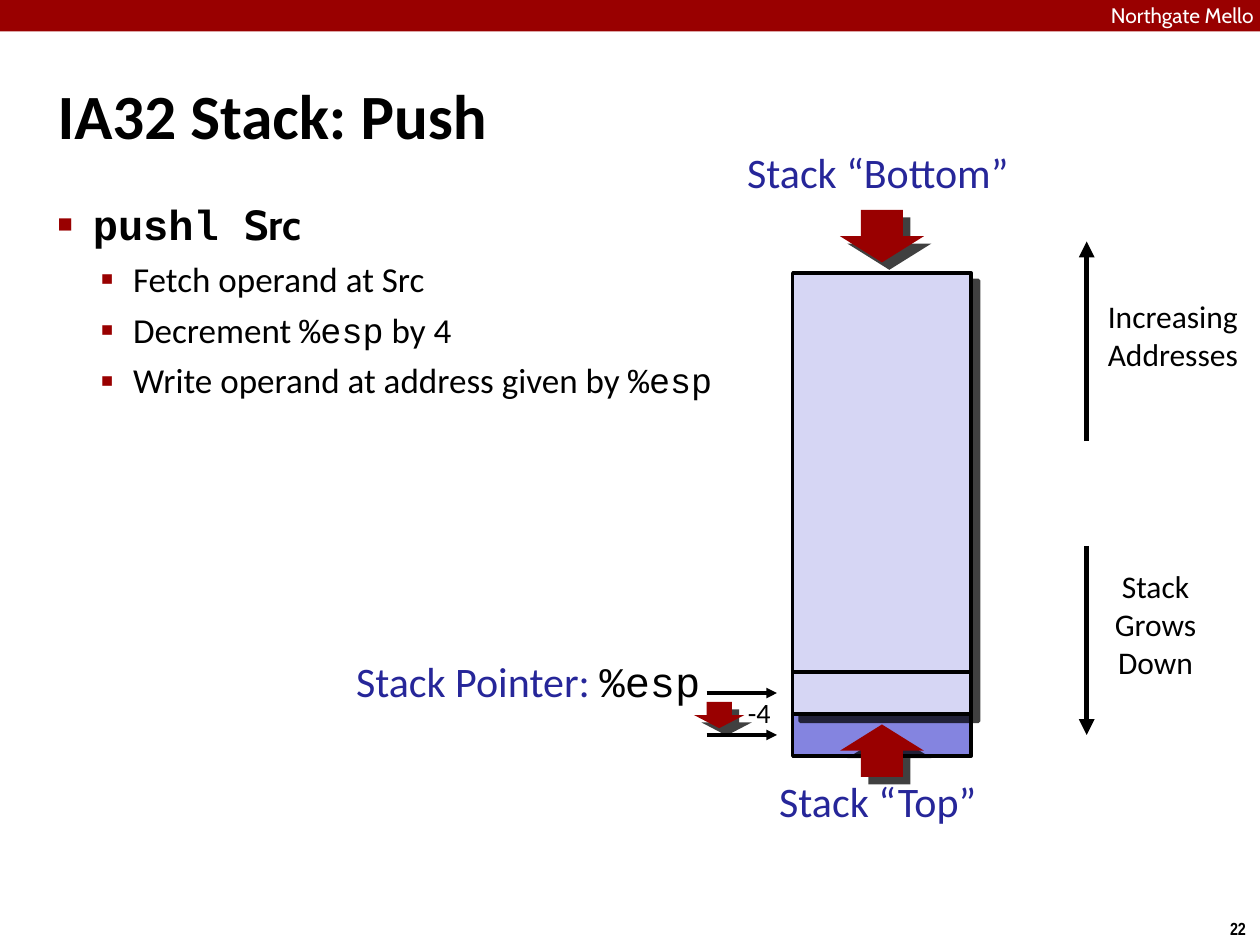
import pptx
import pptx.dml.color
import pptx.enum.shapes
import pptx.enum.text
import pptx.oxml
import pptx.oxml.ns
import pptx.util

SHAPE = pptx.enum.shapes.MSO_SHAPE
ALIGN = pptx.enum.text.PP_ALIGN
ANCHOR = pptx.enum.text.MSO_ANCHOR
COLORS = {
    "black": "000000", "white": "FFFFFF", "red": "990000", "blue": "262699",
    "stack": "D6D6F4", "top": "8484E0",
}
CELL = pptx.util.Inches(1 / 12)  # the slide is 120 columns by 90 rows
COLS, ROWS = 120, 90
NS = pptx.oxml.ns.nsdecls("a")


def cells(*values):
    return [round(v * CELL) for v in values]


def rgb(name):
    return pptx.dml.color.RGBColor.from_string(COLORS[name])


def inside(box, x, y, w, h):
    """Box in grid cells, offset from the corner of its region."""
    return box[0] + x, box[1] + y, w, h


def add_run(p, text, size=18, font="Calibri", color="black", bold=False):
    r = p.add_run()
    r.text = text
    r.font.size = pptx.util.Pt(size)
    r.font.name = font
    r.font.bold = bold
    r.font.color.rgb = rgb(color)


def set_frame(tf, inset=0, wrap=False, anchor=ANCHOR.TOP):
    tf.margin_left = tf.margin_right = pptx.util.Inches(inset)
    tf.margin_top = tf.margin_bottom = pptx.util.Inches(inset)
    tf.auto_size = pptx.enum.text.MSO_AUTO_SIZE.NONE
    tf.word_wrap = wrap
    tf.vertical_anchor = anchor


def add_label(s, box, lines, align=ALIGN.CENTER, wrap=False, inset=0, **fmt):
    """Text box; a line is a string or a list of (text, format) runs."""
    tf = s.shapes.add_textbox(*cells(*box)).text_frame
    set_frame(tf, inset, wrap)
    for i, line in enumerate(lines):
        p = tf.paragraphs[0] if i == 0 else tf.add_paragraph()
        p.alignment = align
        for text, extra in [(line, {})] if isinstance(line, str) else line:
            add_run(p, text, **{**fmt, **extra})


def add_block(s, kind, box, fill, line=None, shadow=False):
    sp = s.shapes.add_shape(kind, *cells(*box))
    sp.shadow.inherit = False
    sp.fill.solid()
    sp.fill.fore_color.rgb = rgb(fill)
    if line:
        sp.line.color.rgb = rgb(line)
        sp.line.width = pptx.util.Pt(2)
    else:
        sp.line.fill.background()
    if shadow:
        effects = sp._element.spPr.find(pptx.oxml.ns.qn("a:effectLst"))
        effects.append(pptx.oxml.parse_xml(
            f'<a:outerShdw {NS} dist="{pptx.util.Pt(6)}" dir="2700000" algn="ctr" rotWithShape="0">'
            f'<a:srgbClr val="{COLORS["black"]}"><a:alpha val="75000"/></a:srgbClr></a:outerShdw>'))


def add_line(s, x1, y1, x2, y2, width=2, arrow=True):
    line = s.shapes.add_connector(
        pptx.enum.shapes.MSO_CONNECTOR.STRAIGHT, *cells(x1, y1, x2, y2))
    line.line.color.rgb = rgb("black")
    line.line.width = pptx.util.Pt(width)
    if arrow:
        line.line._get_or_add_ln().append(
            pptx.oxml.parse_xml(f'<a:tailEnd {NS} type="triangle"/>'))
    line._element.spPr.append(pptx.oxml.parse_xml(f"<a:effectLst {NS}/>"))


def set_indent(p, left, hanging, bullet=None, percent=100):
    pPr = p._p.get_or_add_pPr()
    pPr.set("marL", str(pptx.util.Inches(left)))
    pPr.set("indent", str(-pptx.util.Inches(hanging)))
    if bullet:
        for xml in (f'<a:buClr {NS}><a:srgbClr val="{COLORS["red"]}"/></a:buClr>',
                    f'<a:buSzPct {NS} val="{percent * 1000}"/>',
                    f'<a:buChar {NS} char="{bullet}"/>'):
            pPr.append(pptx.oxml.parse_xml(xml))


def place(sp, box):
    sp.left, sp.top, sp.width, sp.height = cells(*box)


def draw_banner(s, box):
    add_block(s, SHAPE.RECTANGLE, box, "red")
    add_label(s, inside(box, 105.8, 0.25, 14.2, 2.3), ["Northgate Mello"],
              align=ALIGN.LEFT, size=12, font="Cabin", color="white")


def draw_page_number(s, box):
    add_label(s, box, ["22"], inset=0.05, size=10, font="Arial Narrow", bold=True)


def fill_title(s, box):
    title = s.shapes.title
    place(title, box)
    set_frame(title.text_frame, 0.04, True, ANCHOR.MIDDLE)
    p = title.text_frame.paragraphs[0]
    p.alignment = ALIGN.LEFT
    set_indent(p, 0.13, 0.13)
    add_run(p, "IA32 Stack: Push", size=36, bold=True)


def fill_body(s, box):
    body = s.placeholders[1]
    place(body, box)
    tf = body.text_frame
    set_frame(tf, 0.04, True)
    code = {"font": "Courier New"}
    items = [
        (0, [("pushl ", code), ("Src", {"font": "Cabin"})]),
        (1, [("Fetch operand at Src", {})]),
        (1, [("Decrement ", {}), ("%esp", code), (" by 4", {})]),
        (1, [("Write operand at address given by ", {}), ("%esp", code)]),
    ]
    # left margin, hanging indent, bullet, bullet percent; then spacing, size, bold
    levels = [((0.28, 0.28, "■", 60), 6, 24, True),
              ((0.6, 0.26, "▪", 110), 5, 20, False)]
    for i, (level, runs) in enumerate(items):
        p = tf.paragraphs[0] if i == 0 else tf.add_paragraph()
        indent, before, size, bold = levels[level]
        p.level = level
        p.space_before = pptx.util.Pt(before)
        set_indent(p, *indent)
        for text, fmt in runs:
            add_run(p, text, size=size, bold=bold, **fmt)


def draw_pointer(s, box):
    """Stack pointer, moving down one word."""
    x, y, w, h = box
    add_label(s, inside(box, 0, -3.6, 34.6, 6),
              [[("Stack Pointer: ", {"color": "blue"}), ("%esp", {"font": "Courier New"})]],
              align=ALIGN.RIGHT, size=24)
    add_block(s, SHAPE.DOWN_ARROW, inside(box, 34, 0.85, 4.8, 2.5), "red", shadow=True)
    add_label(s, inside(box, 38.5, -0.2, 3.4, 4.2), ["-4"], inset=0.04, size=16)
    for row in (y, y + h):
        add_line(s, x + w - 6.7, row, x + w, row)


def draw_stack(s, box):
    x, y, w, h = box
    add_block(s, SHAPE.RECTANGLE, inside(box, 0, h - 4, w, 4), "top", "black")
    add_block(s, SHAPE.RECTANGLE, inside(box, 0, 0, w, h - 4), "stack", "black", shadow=True)
    add_line(s, x, y + h - 8, x + w, y + h - 8, arrow=False)
    # end markers: name, label row, arrow, arrow row
    for name, label_row, kind, arrow_row in (
            ("Stack “Bottom”", -12, SHAPE.DOWN_ARROW, -6),
            ("Stack “Top”", h + 1.9, SHAPE.UP_ARROW, h - 3)):
        add_label(s, inside(box, -4.9, label_row, 26, 6), [name], size=24, color="blue")
        add_block(s, kind, inside(box, w / 2 - 4, arrow_row, 8, 5), "red", shadow=True)


def draw_directions(s, box):
    x, y, w, h = box
    add_line(s, x, y + 19, x, y, width=3)
    add_label(s, inside(box, 1.4, 5.3, 13.6, 8), ["Increasing", "Addresses"])
    add_line(s, x, y + 29, x, y + h, width=3)
    add_label(s, inside(box, 1.2, 31, 10.7, 12), ["Stack Grows", "Down"], wrap=True)


def main():
    prs = pptx.Presentation()
    prs.slide_width, prs.slide_height = cells(COLS, ROWS)
    s = prs.slides.add_slide(prs.slide_layouts[1])
    draw_page_number(s, (115.9, 86.8, 4, 3.2))
    draw_banner(s, (0, 0, COLS, 3))
    fill_title(s, (5, 3.4, 110, 15))
    fill_body(s, (5, 18.4, 110, 71))
    draw_stack(s, (75.5, 26, 17, 46))
    draw_pointer(s, (32.1, 66, 41.9, 4))
    draw_directions(s, (103.5, 23, 15, 47))
    prs.save("out.pptx")


if __name__ == "__main__":
    main()
